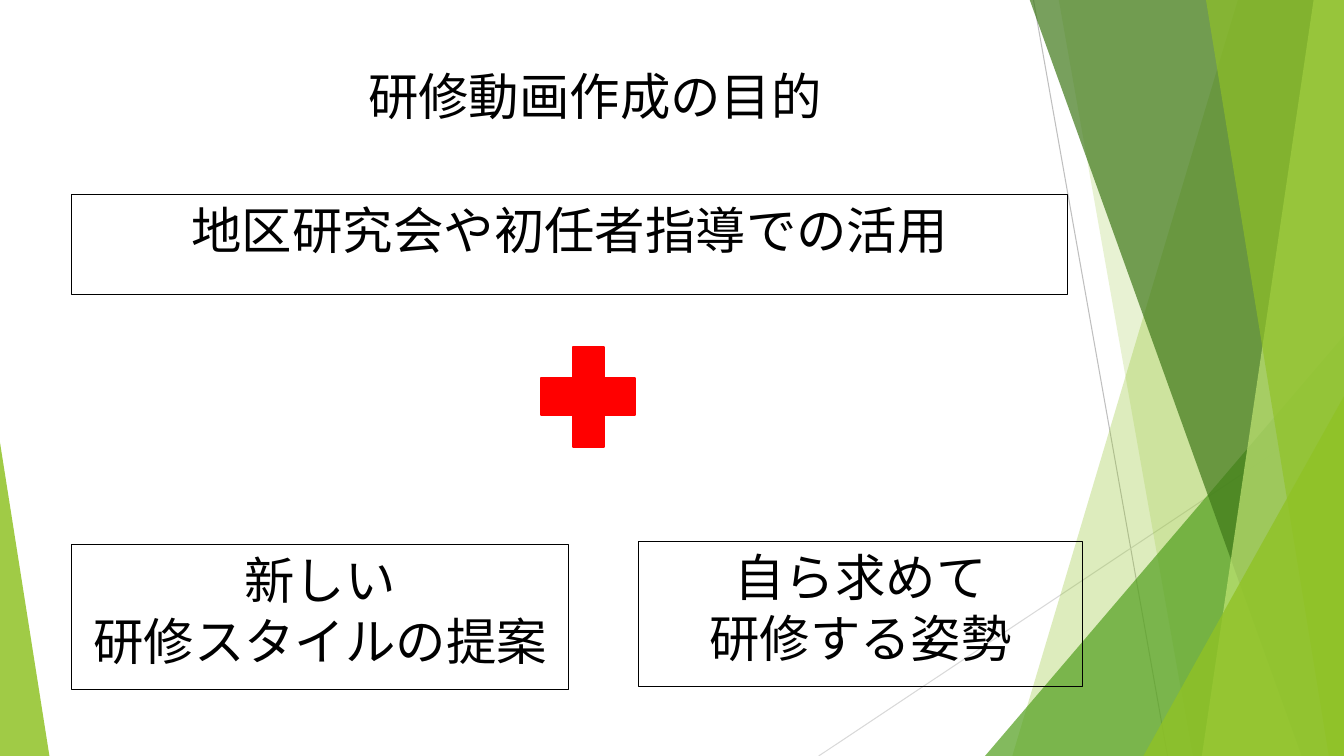
"""Build the slide on the purpose of the training videos."""
from dataclasses import dataclass

from lxml.etree import SubElement
from pptx import Presentation
from pptx.dml.color import RGBColor
from pptx.enum.shapes import MSO_CONNECTOR, MSO_SHAPE
from pptx.enum.text import MSO_ANCHOR, PP_ALIGN
from pptx.oxml.ns import qn
from pptx.util import Inches, Pt


@dataclass(frozen=True)
class Theme:
    """Colours, type and line widths of the slide."""
    text: str = "000000"
    plus: str = "FF0000"
    leaf: str = "90C226"
    grass: str = "54A021"
    forest: str = "3F7819"
    lime: str = "C0E474"
    ray: str = "BFBFBF"
    pale_ray: str = "D9D9D9"
    font: str = "Karla"
    size: float = 36
    thin: float = 0.75
    thick: float = 1.5


THEME = Theme()
WIDTH, HEIGHT = 13.33, 7.5
BAND_TOP = -0.01


def add_ray(slide, start, end, color):
    """Draw a thin line across the background."""
    ray = slide.shapes.add_connector(
        MSO_CONNECTOR.STRAIGHT, *[Inches(value) for value in start + end])
    ray.line.color.rgb = RGBColor.from_string(color)
    ray.line.width = Pt(THEME.thin)
    SubElement(ray._element.spPr, qn("a:effectLst"))


def tint(facet, color, opacity):
    """Give a facet a translucent fill without outline or shadow."""
    facet.shadow.inherit = False
    facet.line.fill.background()
    facet.fill.solid()
    facet.fill.fore_color.rgb = RGBColor.from_string(color)
    fill_color = facet._element.spPr.find(".//" + qn("a:srgbClr"))
    SubElement(fill_color, qn("a:alpha"), val=str(opacity * 1000))


def add_band(slide, top_x, bottom_x, color, opacity):
    """Draw a band from a slanted left edge to the right slide edge."""
    corners = [(top_x, BAND_TOP), (WIDTH, BAND_TOP), (WIDTH, HEIGHT), (bottom_x, HEIGHT)]
    points = [(Inches(x), Inches(y)) for x, y in corners]
    outline = slide.shapes.build_freeform(*points[0], scale=1.0)
    outline.add_line_segments(points[1:], close=True)
    tint(outline.convert_to_shape(), color, opacity)


def add_corner(slide, left, top, width, apex, color, opacity):
    """Draw a right triangle standing on the bottom slide edge."""
    corner = slide.shapes.add_shape(
        MSO_SHAPE.ISOSCELES_TRIANGLE, Inches(left), Inches(top),
        Inches(width), Inches(HEIGHT - top))
    corner.adjustments[0] = apex
    tint(corner, color, opacity)


def write_lines(frame, lines, align):
    """Fill a text frame with one paragraph per line."""
    frame.word_wrap = True
    frame.vertical_anchor = MSO_ANCHOR.TOP
    for index, line in enumerate(lines):
        paragraph = frame.add_paragraph() if index else frame.paragraphs[0]
        paragraph.alignment = align
        run = paragraph.add_run()
        run.text = line
        run.font.size = Pt(THEME.size)
        run.font.name = THEME.font
        run.font.color.rgb = RGBColor.from_string(THEME.text)
        SubElement(run._r.get_or_add_rPr(), qn("a:ea"), typeface=THEME.font)


def add_title(slide, text):
    """Place and fill the title placeholder."""
    title = slide.shapes.title
    title.left, title.top = Inches(3.55), Inches(0.6)
    title.width, title.height = Inches(5.5), Inches(0.99)
    write_lines(title.text_frame, [text], PP_ALIGN.LEFT)


def add_purpose(slide, box, lines):
    """Draw an outlined box with centred text."""
    purpose = slide.shapes.add_shape(
        MSO_SHAPE.RECTANGLE, *[Inches(value) for value in box])
    purpose.shadow.inherit = False
    purpose.fill.background()
    purpose.line.color.rgb = RGBColor.from_string(THEME.text)
    purpose.line.width = Pt(THEME.thin)
    write_lines(purpose.text_frame, lines, PP_ALIGN.CENTER)


def add_plus(slide):
    """Draw the red plus sign between the purposes."""
    plus = slide.shapes.add_shape(
        MSO_SHAPE.CROSS, Inches(5.37), Inches(3.44), Inches(0.93), Inches(0.99))
    plus.adjustments[0] = 0.335
    plus.shadow.inherit = False
    plus.fill.solid()
    plus.fill.fore_color.rgb = RGBColor.from_string(THEME.plus)
    plus.line.color.rgb = RGBColor.from_string(THEME.plus)
    plus.line.width = Pt(THEME.thick)


def add_background(slide):
    """Draw the rays and the overlapping green facets."""
    add_ray(slide, (10.25, 0), (11.58, HEIGHT), THEME.ray)
    add_ray(slide, (WIDTH, 4.03), (8.12, HEIGHT), THEME.pale_ray)
    add_band(slide, 12.28, 10.04, THEME.leaf, 30)
    add_band(slide, 10.5, 11.83, THEME.leaf, 20)
    add_corner(slide, 9.77, 3.33, 3.56, 1, THEME.grass, 72)
    add_band(slide, 10.21, 12.91, THEME.forest, 70)
    add_band(slide, 13.03, 11.92, THEME.lime, 70)
    add_band(slide, 11.96, 13.18, THEME.leaf, 65)
    add_corner(slide, 11.34, 3.93, 1.99, 1, THEME.leaf, 80)
    add_corner(slide, 0, 4.39, 0.49, 0, THEME.leaf, 85)


def main():
    """Build and save the presentation."""
    deck = Presentation()
    deck.slide_width, deck.slide_height = Inches(WIDTH), Inches(HEIGHT)
    slide = deck.slides.add_slide(deck.slide_layouts[5])
    add_background(slide)
    add_title(slide, "研修動画作成の目的")
    add_purpose(slide, (0.71, 1.93, 9.88, 0.99), ["地区研究会や初任者指導での活用"])
    add_purpose(slide, (0.71, 5.4, 4.93, 1.44), ["新しい", "研修スタイルの提案"])
    add_purpose(slide, (6.33, 5.37, 4.41, 1.44), ["自ら求めて", "研修する姿勢"])
    add_plus(slide)
    deck.save("out.pptx")


if __name__ == "__main__":
    main()
